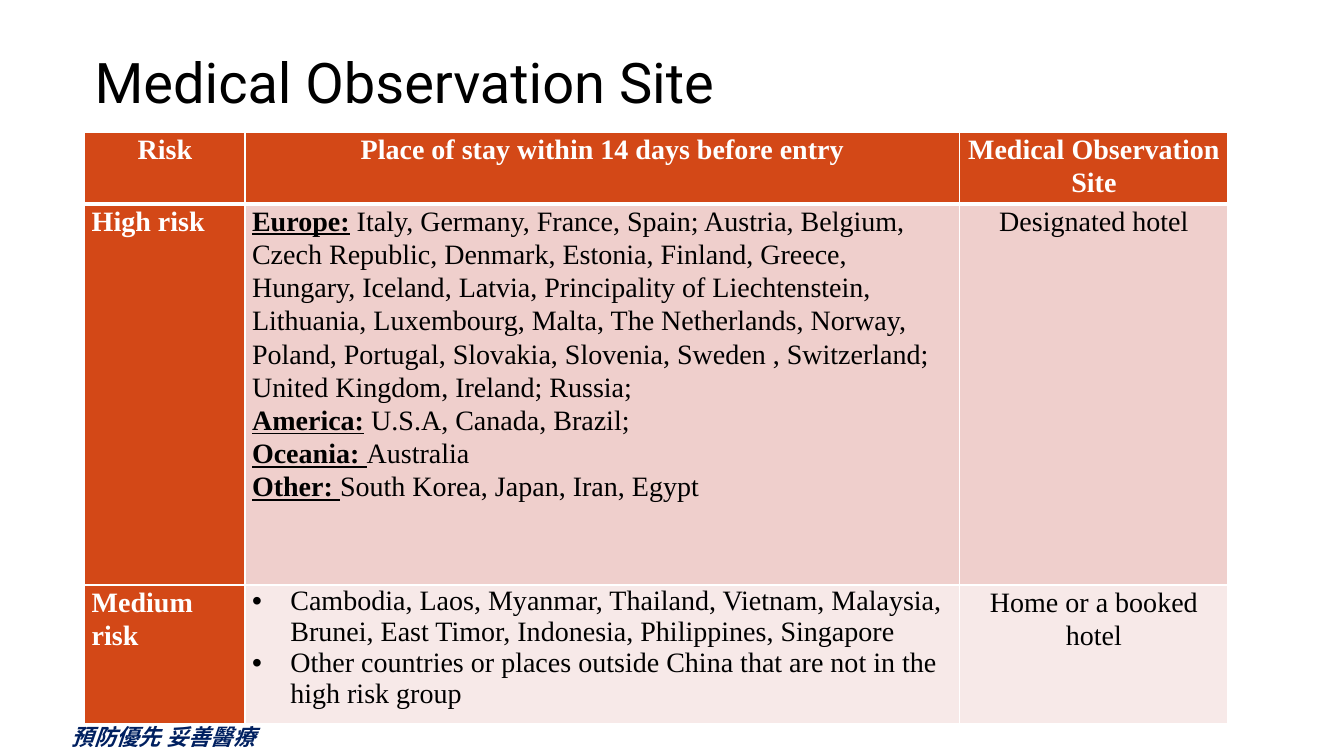
import pptx
import pptx.dml.color
import pptx.enum.text
import pptx.oxml
import pptx.oxml.ns
import pptx.util
from pptx.util import Inches

# Content: each cell is a list of paragraphs, each paragraph a list of (text, is_label)
TITLE = "Medical Observation Site"
MOTTO = "預防優先 妥善醫療"
EUROPE = (
    " Italy, Germany, France, Spain; Austria, Belgium, Czech Republic, Denmark, "
    "Estonia, Finland, Greece, Hungary, Iceland, Latvia, Principality of "
    "Liechtenstein, Lithuania, Luxembourg, Malta, The Netherlands, Norway, Poland, "
    "Portugal, Slovakia, Slovenia, Sweden , Switzerland; United Kingdom, Ireland; Russia;"
)
HEADERS = ["Risk", "Place of stay within 14 days before entry", "Medical Observation Site"]
HIGH_RISK_PLACES = [
    [("Europe:", True), (EUROPE, False)],
    [("America:", True), (" U.S.A, Canada, Brazil;", False)],
    [("Oceania: ", True), ("Australia", False)],
    [("Other: ", True), ("South Korea, Japan, Iran, Egypt", False)],
]
MEDIUM_RISK_PLACES = [
    [("Cambodia, Laos, Myanmar, Thailand, Vietnam, Malaysia, Brunei, East Timor, "
      "Indonesia, Philippines, Singapore", False)],
    [("Other countries or places outside China that are not in the high risk group", False)],
]
ROWS = [
    [[[(header, False)]] for header in HEADERS],
    [[[("High risk", False)]], HIGH_RISK_PLACES, [[("Designated hotel", False)]]],
    [[[("Medium risk", False)]], MEDIUM_RISK_PLACES, [[("Home or a booked hotel", False)]]],
]
COLUMN_WIDTHS = [1.59, 7.09, 2.66]
ROW_HEIGHTS = [0.67, 3.78, 1.38]
BODY_FILLS = ["D34817", "EFCFCC", "F7E9E8"]
ACCENT, WHITE, BLACK, NAVY = "D34817", "FFFFFF", "000000", "002060"
LEFT, CENTER = pptx.enum.text.PP_ALIGN.LEFT, pptx.enum.text.PP_ALIGN.CENTER


def color(value):
    return pptx.dml.color.RGBColor.from_string(value)


def add_text(paragraph, text, *, size=20, font="Times New Roman", fill=BLACK,
             bold=False, italic=False, underline=False):
    run = paragraph.add_run()
    run.text = text
    run.font.size = pptx.util.Pt(size)
    run.font.name = font
    run.font.color.rgb = color(fill)
    run.font.bold, run.font.italic, run.font.underline = bold, italic, underline
    properties = run.font._element
    for tag in ("a:ea", "a:cs"):
        typeface = pptx.oxml.ns.qn(tag)
        properties.append(properties.makeelement(typeface, {"typeface": font}))


def add_box(slide, left, top, width, height, text, align, anchor, **text_format):
    box = slide.shapes.add_textbox(Inches(left), Inches(top), Inches(width), Inches(height))
    frame = box.text_frame
    frame.word_wrap = True
    frame.vertical_anchor = anchor
    paragraph = frame.paragraphs[0]
    paragraph.alignment = align
    add_text(paragraph, text, **text_format)
    return frame


def add_bullet(paragraph):
    properties = paragraph._p.get_or_add_pPr()
    properties.set("marL", str(Inches(0.38)))
    properties.set("indent", str(-Inches(0.38)))
    for tag, name, value in (("buFont", "typeface", "Arial"), ("buChar", "char", "•")):
        properties.append(properties.makeelement(pptx.oxml.ns.qn(f"a:{tag}"), {name: value}))


def set_borders(cell, widths):
    properties = cell._tc.get_or_add_tcPr()
    for index, (side, width) in enumerate(zip("LRTB", widths)):
        line = pptx.oxml.parse_xml(
            f'<a:ln{side} {pptx.oxml.ns.nsdecls("a")} w="{pptx.util.Pt(width)}">'
            f'<a:solidFill><a:srgbClr val="{WHITE}"/></a:solidFill></a:ln{side}>')
        properties.insert(index, line)


def fill_cell(cell, paragraphs, row, column):
    strong = row == 0 or column == 0
    cell.margin_left = cell.margin_right = Inches(0.07)
    cell.margin_top = cell.margin_bottom = 0
    cell.fill.solid()
    cell.fill.fore_color.rgb = color(ACCENT if strong else BODY_FILLS[row])
    set_borders(cell, (1, 1, 3 if row == 1 else 1, 3 if row == 0 else 1))
    for index, pieces in enumerate(paragraphs):
        frame = cell.text_frame
        paragraph = frame.paragraphs[0] if index == 0 else frame.add_paragraph()
        paragraph.alignment = CENTER if row == 0 or column == 2 else LEFT
        if paragraphs is MEDIUM_RISK_PLACES:
            add_bullet(paragraph)
        else:
            paragraph.line_spacing = 1.07
        for text, is_label in pieces:
            add_text(paragraph, text, fill=WHITE if strong else BLACK,
                     bold=strong or is_label, underline=is_label)


def main():
    presentation = pptx.Presentation()
    presentation.slide_width, presentation.slide_height = Inches(13.33), Inches(7.5)
    slide = presentation.slides.add_slide(presentation.slide_layouts[6])

    # Motto and title
    add_box(slide, 0, 7.13, 3.25, 0.37, MOTTO, CENTER, pptx.enum.text.MSO_ANCHOR.TOP,
            size=16, font="Noto Sans CJK SC", fill=NAVY, bold=True, italic=True)
    title = add_box(slide, 0.84, 0.36, 10.55, 0.94, TITLE, LEFT,
                    pptx.enum.text.MSO_ANCHOR.MIDDLE, size=40, font="Roboto")
    title.margin_bottom = Inches(0.1)

    # Risk table
    table = slide.shapes.add_table(
        len(ROWS), len(COLUMN_WIDTHS), Inches(0.84), Inches(1.31),
        Inches(sum(COLUMN_WIDTHS)), Inches(sum(ROW_HEIGHTS))).table
    for column, width in zip(table.columns, COLUMN_WIDTHS):
        column.width = Inches(width)
    for row, height in zip(table.rows, ROW_HEIGHTS):
        row.height = Inches(height)
    for row, cells in enumerate(ROWS):
        for column, paragraphs in enumerate(cells):
            fill_cell(table.cell(row, column), paragraphs, row, column)

    presentation.save("out.pptx")


if __name__ == "__main__":
    main()
